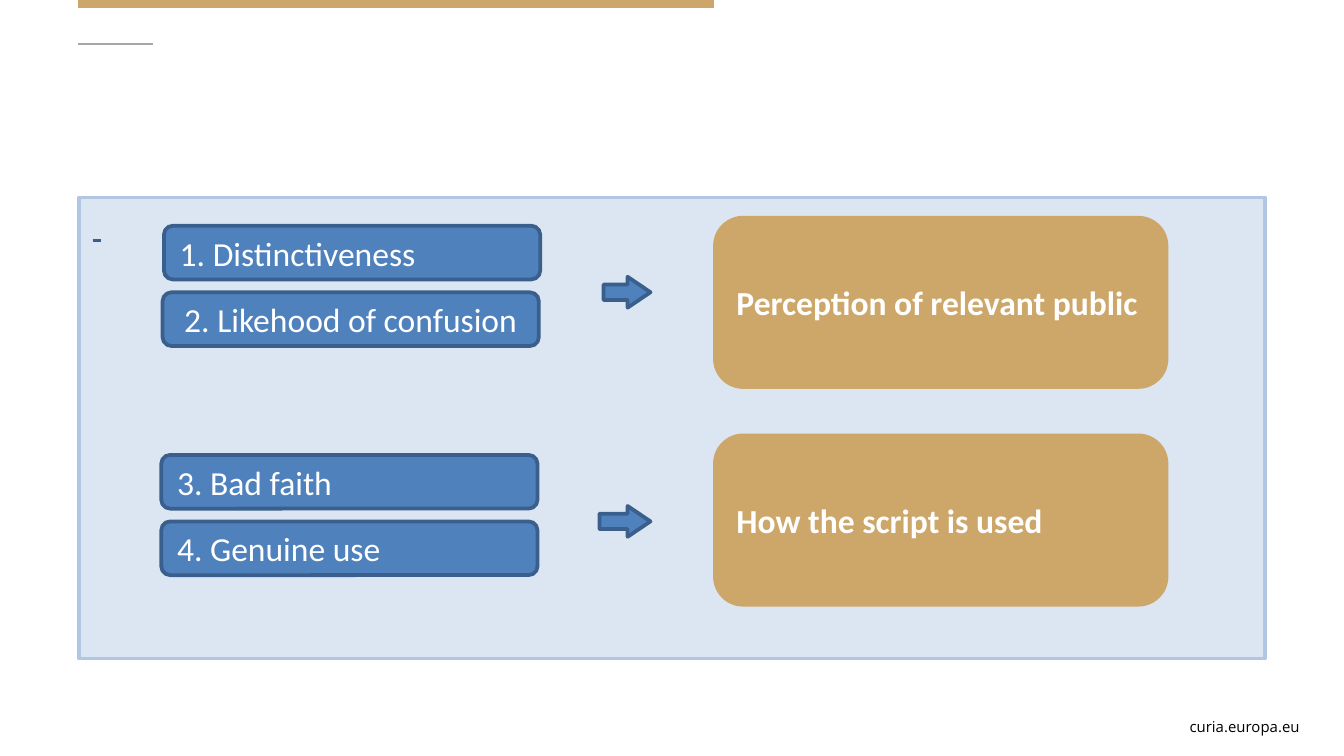
from lxml import etree
from pptx import Presentation
from pptx.dml.color import RGBColor
from pptx.enum.shapes import MSO_CONNECTOR, MSO_SHAPE
from pptx.enum.text import MSO_ANCHOR, PP_ALIGN
from pptx.oxml.ns import qn
from pptx.util import Inches, Pt

RECTANGLE, ROUNDED = MSO_SHAPE.RECTANGLE, MSO_SHAPE.ROUNDED_RECTANGLE
ARROW = MSO_SHAPE.RIGHT_ARROW
STRAIGHT = MSO_CONNECTOR.STRAIGHT
LEFT, CENTER, RIGHT = PP_ALIGN.LEFT, PP_ALIGN.CENTER, PP_ALIGN.RIGHT
TOP, MIDDLE = MSO_ANCHOR.TOP, MSO_ANCHOR.MIDDLE

COLUMNS, ROWS = 100, 56.25
CELL = Inches(0.1)
GOLD, GREY, WHITE, BLACK = "CDA769", "A6A6A6", "FFFFFF", "000000"
BLUE, NAVY, PALE, PALE_EDGE = "4F81BD", "3A5F8C", "DCE6F2", "B0C6E3"


def color(hex_code):
    """Return the colour for a hex string."""
    return RGBColor.from_string(hex_code)


def grid(*cells):
    """Convert grid columns or rows to slide lengths."""
    return [round(cell * CELL) for cell in cells]


def write(shape, words, size, ink, font="Calibri", bold=False, align=LEFT, anchor=MIDDLE):
    """Write one run of text into a shape."""
    frame = shape.text_frame
    frame.word_wrap = True
    frame.vertical_anchor = anchor
    paragraph = frame.paragraphs[0]
    paragraph.alignment = align
    run = paragraph.add_run()
    run.text = words
    run.font.name, run.font.size, run.font.bold = font, Pt(size), bold
    run.font.color.rgb = color(ink)


def block(slide, kind, box, fill, edge):
    """Add a filled, outlined shape in a grid box."""
    shape = slide.shapes.add_shape(kind, *grid(*box))
    shape.shadow.inherit = False
    shape.fill.solid()
    shape.fill.fore_color.rgb = color(fill)
    shape.line.color.rgb = color(edge)
    shape.line.width = Pt(2)
    return shape


def rule(slide, left, top, width, ink, weight):
    """Draw a horizontal line."""
    line = slide.shapes.add_connector(STRAIGHT, *grid(left, top, left + width, top))
    line.line.color.rgb = color(ink)
    line.line.width = Pt(weight)
    etree.SubElement(line._element.spPr, qn("a:effectLst"))


def header(slide, left, top):
    """Draw the gold bar and the short grey rule beneath it."""
    rule(slide, left, top, 47.3, GOLD, 4.5)
    rule(slide, left, top + 3, 5.6, GREY, 1)


def footer(slide, box):
    """Write the site address."""
    address = slide.shapes.add_textbox(*grid(*box))
    write(address, "curia.europa.eu", 8, BLACK, "Open Sans", align=RIGHT, anchor=TOP)


def panel(slide, box):
    """Draw the pale panel with its dash."""
    left, top, _, _ = box
    block(slide, RECTANGLE, box, PALE, PALE_EDGE)
    rule(slide, left + 1, top + 3.2, 0.6, NAVY, 1.5)


def test_group(slide, box, issues, issues_offset, arrow_width, criterion):
    """Place two issues, an arrow and their shared criterion in a box."""
    left, top, width, height = box
    criterion_width, issue_pitch, arrow_end = 33.6, 4.95, 36.4
    issues_top = top + issues_offset
    result = block(slide, ROUNDED, (left + width - criterion_width, top, criterion_width, height),
                   GOLD, GOLD)
    write(result, criterion, 18, WHITE, bold=True)
    block(slide, ARROW, (left + arrow_end - arrow_width, issues_top + 3.8, arrow_width, 2.3),
          BLUE, NAVY).adjustments[1] = 0.74
    for row, (words, indent, align) in enumerate(issues):
        issue = block(slide, ROUNDED, (left + indent, issues_top + row * issue_pitch, 28, 4),
                      BLUE, NAVY)
        write(issue, words, 18, WHITE, align=align)


def main():
    """Build and save the slide."""
    deck = Presentation()
    deck.slide_width, deck.slide_height = grid(COLUMNS, ROWS)
    slide = deck.slides.add_slide(deck.slide_layouts[6])
    header(slide, 5.8, 0.3)
    footer(slide, (76.4, 52.9, 21.3, 2.4))
    panel(slide, (5.9, 14.7, 88.2, 34.3))
    test_group(slide, (12, 16.2, 74.8, 12.6),
               [("1. Distinctiveness", 0.2, LEFT), ("2. Likehood of confusion", 0.1, CENTER)],
               0.6, 3.5, "Perception of relevant public")
    test_group(slide, (12, 32.4, 74.8, 12.6),
               [("3. Bad faith", 0, LEFT), ("4. Genuine use", 0, LEFT)],
               1.45, 3.8, "How the script is used")
    deck.save("out.pptx")


if __name__ == "__main__":
    main()
